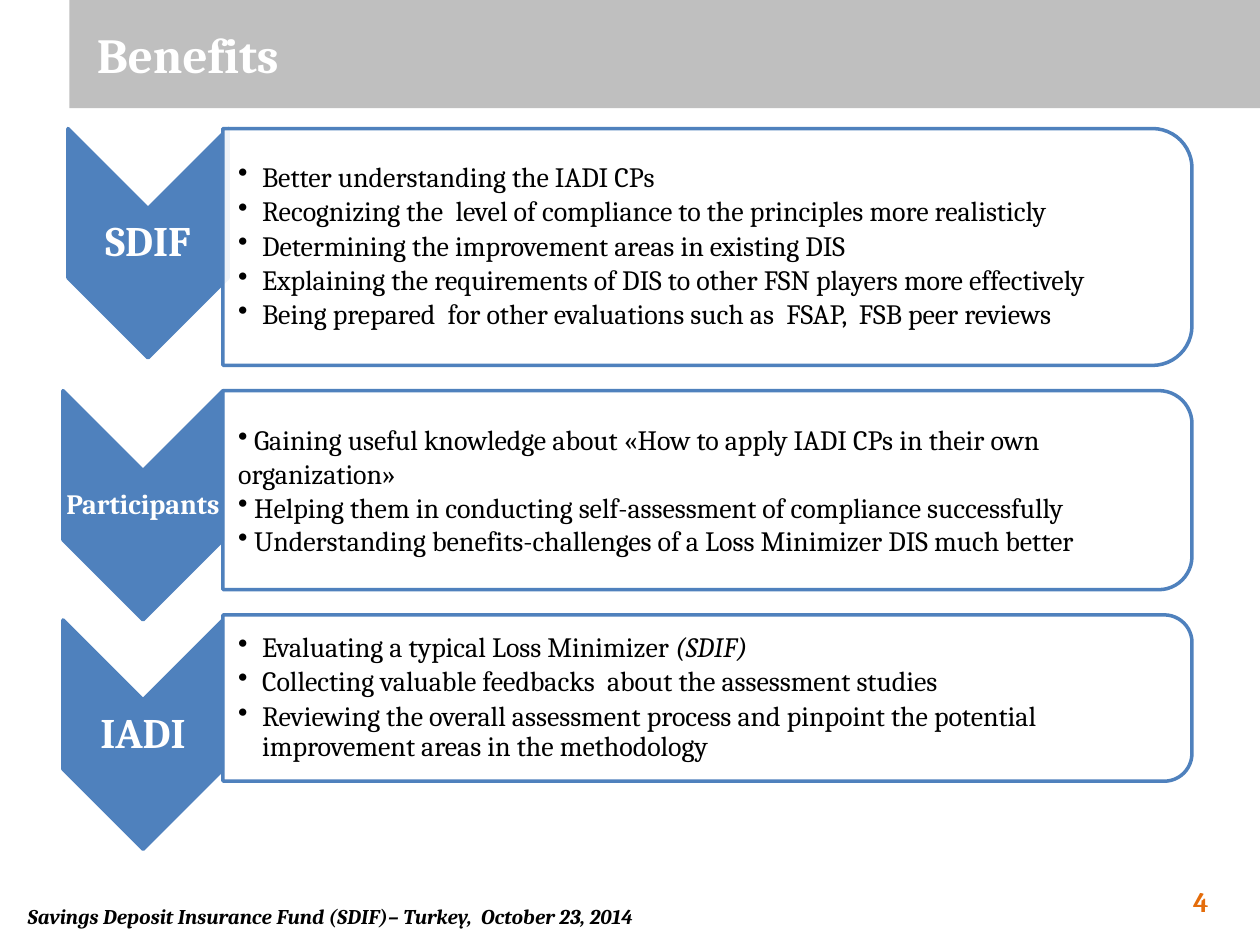
from lxml.etree import SubElement
from pptx import Presentation
from pptx.dml.color import RGBColor
from pptx.enum.shapes import MSO_SHAPE
from pptx.enum.text import MSO_ANCHOR, PP_ALIGN
from pptx.oxml.ns import qn
from pptx.util import Inches, Pt

CELL = 0.1  # the slide is a grid of 100 columns by 75 rows
BLUE, GREY, ORANGE, WHITE, BLACK = "4F81BD", "BFBFBF", "E46C0A", "FFFFFF", "000000"


def color(value):
    return RGBColor.from_string(value)


def cells(count):
    return Inches(count * CELL)


class SlideBuilder:
    font = "Cambria"
    line_width = Pt(2)

    def __init__(self, slide):
        self.slide = slide

    def shape(self, kind, left, top, width, height, fill, line=None):
        item = self.slide.shapes.add_shape(kind, *map(cells, (left, top, width, height)))
        item.shadow.inherit = False
        item.fill.solid()
        item.fill.fore_color.rgb = color(fill)
        if line:
            item.line.color.rgb = color(line)
            item.line.width = self.line_width
        else:
            item.line.fill.background()
        return item

    def turned(self, kind, left, top, width, height, fill):
        """Place a shape turned by 90 degrees so that it covers the given area."""
        shift = (width - height) / 2
        item = self.shape(kind, left + shift, top - shift, height, width, fill, BLUE)
        item.rotation = 90
        return item

    def chevron(self, left, top, width, height):
        self.turned(MSO_SHAPE.CHEVRON, left, top, width, height, BLUE)

    def panel(self, left, top, width, height):
        item = self.turned(MSO_SHAPE.ROUND_2_SAME_RECTANGLE, left, top, width, height, WHITE)
        tint = item.fill._xPr.find(qn("a:solidFill"))[0]
        SubElement(tint, qn("a:alpha"), val="90000")

    def bullet(self, paragraph, hang):
        paragraph.level = 1
        props = paragraph._p.get_or_add_pPr()
        props.set("marL", str(cells(hang)))
        props.set("indent", str(-cells(hang)))
        SubElement(props, qn("a:buChar"), char="•")

    def text(self, left, top, width, height, paragraphs, size, ink=BLACK, bold=False,
             italic=False, align=PP_ALIGN.LEFT, anchor=MSO_ANCHOR.MIDDLE,
             insets=(1, 0.5, 1, 0.5), spacing=1, after=0, hang=None):
        box = self.slide.shapes.add_textbox(*map(cells, (left, top, width, height)))
        frame = box.text_frame
        frame.word_wrap = True
        frame.vertical_anchor = anchor
        for side, inset in zip(("left", "top", "right", "bottom"), insets):
            setattr(frame, f"margin_{side}", cells(inset))
        look = {"name": self.font, "size": Pt(size), "bold": bold, "italic": italic}
        layout = {"alignment": align, "line_spacing": spacing, "space_after": Pt(after)}
        for index, runs in enumerate(paragraphs):
            paragraph = frame.add_paragraph() if index else frame.paragraphs[0]
            if hang is not None:
                self.bullet(paragraph, hang)
            for name, value in layout.items():
                setattr(paragraph, name, value)
            # A paragraph is a string, or a plain part followed by an italic part
            parts = (runs,) if isinstance(runs, str) else runs
            for part_index, part in enumerate(parts):
                run = paragraph.add_run()
                run.text = part
                for name, value in look.items():
                    setattr(run.font, name, value)
                run.font.color.rgb = color(ink)
                if part_index:
                    run.font.italic = True


# Heading, label size, chevron left and top, panel height, list format, benefits
LISTED = {"hang": 1.9, "spacing": 0.9, "after": 2.4}
SECTIONS = [
    ("SDIF", 24, 5.4, 10.2, 18.8, LISTED, [
        "Better understanding the IADI CPs",
        "Recognizing the  level of compliance to the principles more realisticly",
        "Determining the improvement areas in existing DIS",
        "Explaining the requirements of DIS to other FSN players more effectively",
        "Being prepared  for other evaluations such as  FSAP,  FSB peer reviews",
    ]),
    ("Participants", 16, 5, 31, 15.8, {"hang": 0}, [
        " Gaining useful knowledge about «How to apply IADI CPs in their own organization»",
        " Helping them in conducting self-assessment of compliance successfully",
        " Understanding benefits-challenges of a Loss Minimizer DIS much better",
    ]),
    ("IADI", 24, 5, 49.2, 13.2, LISTED, [
        ("Evaluating a typical Loss Minimizer ", "(SDIF)"),
        "Collecting valuable feedbacks  about the assessment studies",
        "Reviewing the overall assessment process and pinpoint the potential "
        "improvement areas in the methodology",
    ]),
]
CHEVRON_WIDTH, CHEVRON_HEIGHT, LABEL_HEIGHT = 12.7, 18.2, 5.5
PANEL_LEFT, PANEL_WIDTH, PANEL_TOP, PANEL_GAP = 17.7, 76.9, 10.2, 2


def main():
    deck = Presentation()
    deck.slide_width, deck.slide_height = cells(100), cells(75)
    builder = SlideBuilder(deck.slides.add_slide(deck.slide_layouts[6]))

    # Title band
    builder.shape(MSO_SHAPE.RECTANGLE, 5.5, 0, 94.5, 8.6, GREY)
    builder.text(6.7, 0, 83.5, 8.6, ["Benefits"], 28, WHITE, bold=True)

    # Footer and page number
    builder.text(1.2, 71.2, 59.1, 3,
                 ["Savings Deposit Insurance Fund (SDIF)– Turkey,  October 23, 2014"],
                 12, bold=True, italic=True, anchor=MSO_ANCHOR.TOP)
    builder.text(89.1, 69.5, 7.8, 4, ["4"], 16, ORANGE, bold=True, align=PP_ALIGN.RIGHT)

    # One chevron and one panel of benefits per beneficiary
    panel_top = PANEL_TOP
    for heading, size, left, top, height, list_format, benefits in SECTIONS:
        builder.chevron(left, top, CHEVRON_WIDTH, CHEVRON_HEIGHT)
        builder.text(left, top + (CHEVRON_HEIGHT - LABEL_HEIGHT) / 2, CHEVRON_WIDTH,
                     LABEL_HEIGHT, [heading], size, WHITE, bold=True,
                     align=PP_ALIGN.CENTER, insets=(0.1,) * 4, spacing=0.9)
        builder.panel(PANEL_LEFT, panel_top, PANEL_WIDTH, height)
        builder.text(PANEL_LEFT, panel_top + 0.05 * height, PANEL_WIDTH - 0.8,
                     0.9 * height, benefits, 16, insets=(1.2, 0.1, 0.1, 0.1), **list_format)
        panel_top += height + PANEL_GAP

    deck.save("out.pptx")


if __name__ == "__main__":
    main()
